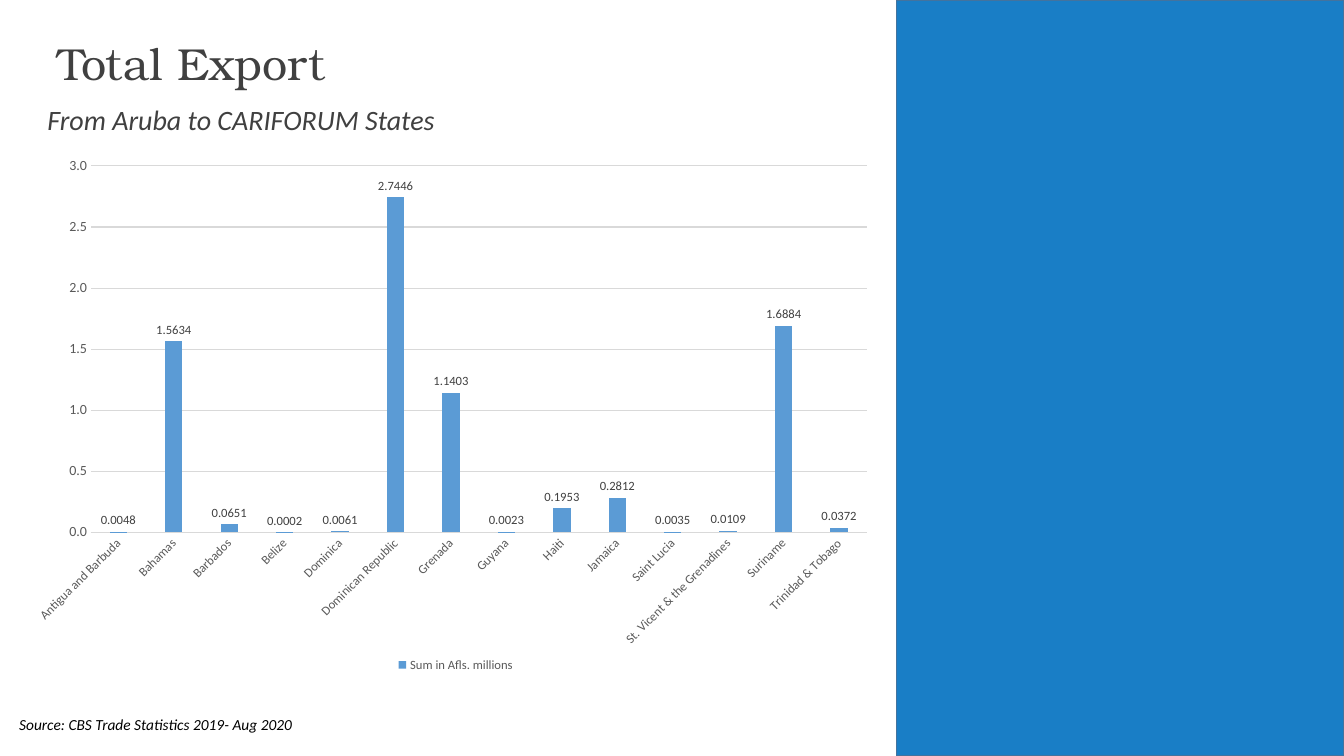
from dataclasses import dataclass

import pptx
import pptx.chart.data
import pptx.dml.color
import pptx.enum.chart
import pptx.enum.shapes
import pptx.enum.text
import pptx.oxml
import pptx.oxml.ns
import pptx.util
from pptx.util import Inches


@dataclass(frozen=True)
class Theme:
    heading_font: str = "TeX Gyre Bonum"
    body_font: str = "Calibri"
    title_size: int = 32
    subtitle_size: int = 20
    source_size: int = 11
    axis_size: int = 10
    label_size: int = 9
    heading: str = "404040"
    muted: str = "595959"
    black: str = "000000"
    grid: str = "D9D9D9"
    bar: str = "5B9BD5"
    panel: str = "0070C0"
    panel_line: str = "43739E"


THEME = Theme()

EXPORTS = {
    "Antigua and Barbuda": 0.0048,
    "Bahamas": 1.5634,
    "Barbados": 0.0651,
    "Belize": 0.0002,
    "Dominica": 0.0061,
    "Dominican Republic": 2.7446,
    "Grenada": 1.1403,
    "Guyana": 0.0023,
    "Haiti": 0.1953,
    "Jamaica": 0.2812,
    "Saint Lucia": 0.0035,
    "St. Vicent & the Grenadines": 0.0109,
    "Suriname": 1.6884,
    "Trinidad & Tobago": 0.0372,
}


def color(value):
    return pptx.dml.color.RGBColor.from_string(value)


def set_font(font, name, size, value, italic=None):
    font.name = name
    font.size = pptx.util.Pt(size)
    font.color.rgb = color(value)
    font.bold = False
    font.italic = italic


def set_line(line, value, width):
    line.color.rgb = color(value)
    line.width = pptx.util.Pt(width)


def place(shape, box):
    shape.left, shape.top, shape.width, shape.height = map(Inches, box)


def add_panel(slide, box):
    panel = slide.shapes.add_shape(
        pptx.enum.shapes.MSO_SHAPE.RECTANGLE, *map(Inches, box))
    panel.shadow.inherit = False
    panel.fill.solid()
    panel.fill.fore_color.rgb = color(THEME.panel)
    fill_color = panel.fill._xPr.find(".//" + pptx.oxml.ns.qn("a:srgbClr"))
    fill_color.append(pptx.oxml.parse_xml(
        f'<a:alpha {pptx.oxml.ns.nsdecls("a")} val="90000"/>'))
    set_line(panel.line, THEME.panel_line, 1)


def add_title(slide, box, text):
    title = slide.shapes.title
    place(title, box)
    frame = title.text_frame
    frame.text = text
    frame.auto_size = pptx.enum.text.MSO_AUTO_SIZE.NONE
    frame.vertical_anchor = pptx.enum.text.MSO_ANCHOR.BOTTOM
    paragraph = frame.paragraphs[0]
    paragraph.alignment = pptx.enum.text.PP_ALIGN.LEFT
    paragraph.line_spacing = 0.9
    set_font(paragraph.font, THEME.heading_font, THEME.title_size, THEME.heading)


def add_italic_text(slide, box, text, size, value):
    frame = slide.shapes.add_textbox(*map(Inches, box)).text_frame
    frame.word_wrap = True
    frame.margin_left = frame.margin_right = 0
    frame.margin_top = frame.margin_bottom = 0
    frame.text = text
    set_font(frame.paragraphs[0].font, THEME.body_font, size, value, italic=True)


def set_plot_layout(chart, x, y, width, height):
    plot_area = chart.plots[0]._element.getparent()
    for layout in plot_area.findall(pptx.oxml.ns.qn("c:layout")):
        plot_area.remove(layout)
    plot_area.insert(0, pptx.oxml.parse_xml(
        f'<c:layout {pptx.oxml.ns.nsdecls("c")}><c:manualLayout>'
        '<c:layoutTarget val="inner"/><c:xMode val="edge"/><c:yMode val="edge"/>'
        f'<c:x val="{x}"/><c:y val="{y}"/><c:w val="{width}"/><c:h val="{height}"/>'
        '</c:manualLayout></c:layout>'))


def format_axes(chart):
    categories, values = chart.category_axis, chart.value_axis
    for axis, size in ((categories, THEME.label_size), (values, THEME.axis_size)):
        axis.major_tick_mark = pptx.enum.chart.XL_TICK_MARK.NONE
        axis.minor_tick_mark = pptx.enum.chart.XL_TICK_MARK.NONE
        set_font(axis.tick_labels.font, THEME.body_font, size, THEME.muted)
    set_line(categories.format.line, THEME.grid, 0.75)
    text_body = categories._element.find(
        pptx.oxml.ns.qn("c:txPr")).find(pptx.oxml.ns.qn("a:bodyPr"))
    text_body.set("rot", "-2700000")
    text_body.set("vert", "horz")
    values.minimum_scale, values.maximum_scale, values.major_unit = 0, 3, 0.5
    values.tick_labels.number_format = "0.0"
    values.tick_labels.number_format_is_linked = False
    values.format.line.fill.background()
    values.has_major_gridlines = True
    set_line(values.major_gridlines.format.line, THEME.grid, 0.75)


def add_export_chart(slide, box):
    data = pptx.chart.data.CategoryChartData(number_format="0.0000")
    data.categories = list(EXPORTS)
    data.add_series("Sum in Afls. millions", list(EXPORTS.values()))
    chart = slide.shapes.add_chart(
        pptx.enum.chart.XL_CHART_TYPE.COLUMN_CLUSTERED,
        *map(Inches, box), data).chart
    set_font(chart.font, THEME.body_font, THEME.axis_size, THEME.black)
    chart.has_title = False
    chart.has_legend = True
    chart.legend.position = pptx.enum.chart.XL_LEGEND_POSITION.BOTTOM
    chart.legend.include_in_layout = False
    set_font(chart.legend.font, THEME.body_font, THEME.label_size, THEME.muted)
    format_axes(chart)
    set_plot_layout(chart, 0.072, 0.03, 0.91, 0.696)

    plot = chart.plots[0]
    plot.gap_width, plot.overlap = 219, -27
    plot.vary_by_categories = False
    series = plot.series[0]
    series.format.fill.solid()
    series.format.fill.fore_color.rgb = color(THEME.bar)
    labels = series.data_labels
    labels.show_value = True
    labels.position = pptx.enum.chart.XL_LABEL_POSITION.OUTSIDE_END
    labels.number_format = "0.0000"
    labels.number_format_is_linked = False
    set_font(labels.font, THEME.body_font, THEME.label_size, THEME.heading)


def main():
    presentation = pptx.Presentation()
    presentation.slide_width = Inches(13.33)
    presentation.slide_height = Inches(7.5)
    slide = presentation.slides.add_slide(
        presentation.slide_layouts.get_by_name("Title Only"))
    add_panel(slide, (8.89, 0, 4.44, 7.5))
    add_title(slide, (0.47, 0.47, 12.4, 0.47), "Total Export")
    add_italic_text(slide, (0.47, 1.02, 4.93, 0.47),
                    "From Aruba to CARIFORUM States",
                    THEME.subtitle_size, THEME.heading)
    add_export_chart(slide, (0.29, 1.49, 8.46, 5.22))
    add_italic_text(slide, (0.19, 7.09, 5.26, 0.25),
                    "Source: CBS Trade Statistics 2019- Aug 2020",
                    THEME.source_size, THEME.black)
    presentation.save("out.pptx")


if __name__ == "__main__":
    main()
